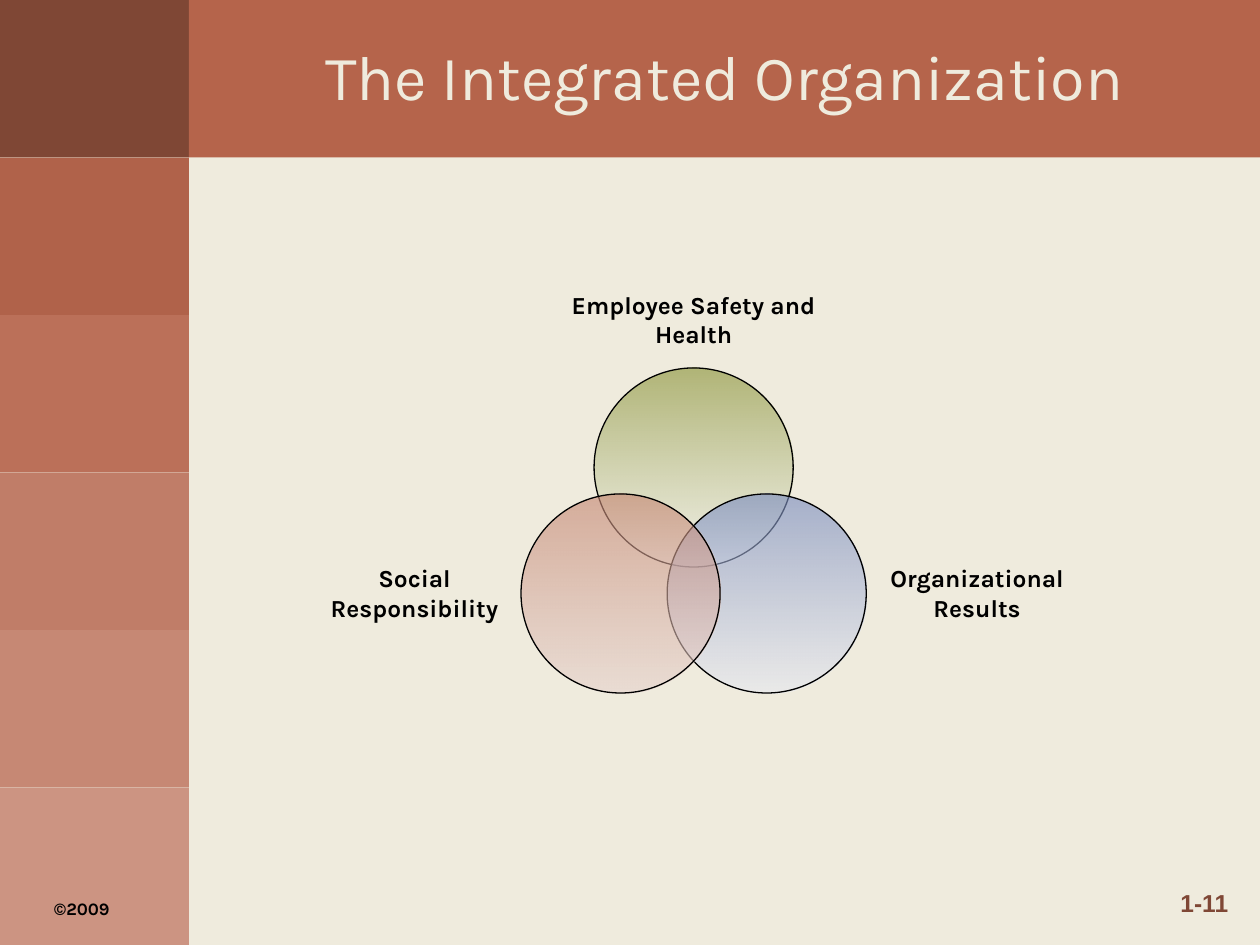
from dataclasses import dataclass

from lxml.etree import SubElement
from pptx import Presentation
from pptx.dml.color import RGBColor
from pptx.enum.shapes import MSO_SHAPE as Shape
from pptx.enum.text import MSO_ANCHOR as Anchor, MSO_AUTO_SIZE as AutoSize, PP_ALIGN as Align
from pptx.oxml.ns import qn
from pptx.util import Inches, Pt


@dataclass(frozen=True)
class Theme:
    background: str = "EFEBDD"
    corner: str = "7F4735"
    banner: str = "B5644B"
    sidebar: tuple = ("B0624A", "BB7059", "C07D68", "C68874", "CC9482")
    ink: str = "000000"
    # Each gradient holds (colour, opacity in percent) from top to bottom
    safety: tuple = (("8C953B", 63), ("F4F5F1", 60))
    results: tuple = (("7B8DBF", 63), ("E7E9F1", 60))
    social: tuple = (("C68874", 63), ("E6D2CD", 59))
    font: str = "Karla"
    number_font: str = "Arial"
    title_size: int = 36
    label_size: int = 14
    small_size: int = 10


THEME = Theme()


def rgb(colour):
    return RGBColor.from_string(colour)


def place(shape, left, top, width, height):
    shape.left, shape.top = Inches(left), Inches(top)
    shape.width, shape.height = Inches(width), Inches(height)


def write_text(shape, text, size=THEME.label_size, font=THEME.font, colour=THEME.ink,
               bold=True, align=Align.LEFT, wrap=True):
    frame = shape.text_frame
    frame.text = text
    frame.word_wrap = wrap
    frame.auto_size = AutoSize.NONE
    frame.vertical_anchor = Anchor.TOP
    paragraph = frame.paragraphs[0]
    paragraph.alignment = align
    paragraph.font.name = font
    paragraph.font.size = Pt(size)
    paragraph.font.bold = bold
    paragraph.font.color.rgb = rgb(colour)


def add_text(slide, text, box, **text_format):
    shape = slide.shapes.add_textbox(*map(Inches, box))
    write_text(shape, text, **text_format)


def add_block(slide, box, colour):
    block = slide.shapes.add_shape(Shape.RECTANGLE, *map(Inches, box))
    block.shadow.inherit = False
    block.fill.solid()
    block.fill.fore_color.rgb = rgb(colour)
    block.line.fill.background()


def add_circle(slide, box, gradient):
    circle = slide.shapes.add_shape(Shape.OVAL, *map(Inches, box))
    circle.shadow.inherit = False
    circle.line.color.rgb = rgb(THEME.ink)
    circle.line.width = Pt(0.75)
    circle.fill.gradient()
    circle.fill.gradient_angle = 270
    for stop, (colour, _) in zip(circle.fill.gradient_stops, gradient):
        stop.color.rgb = rgb(colour)
    # Opacity of each gradient stop
    colours = circle.element.spPr.find(qn("a:gradFill")).iter(qn("a:srgbClr"))
    for element, (_, opacity) in zip(colours, gradient):
        SubElement(element, qn("a:alpha")).set("val", str(opacity * 1000))


def build_sidebar(slide, left, top, width, height):
    colours = (THEME.corner, *THEME.sidebar)
    step = height / len(colours)
    for row, colour in enumerate(colours):
        add_block(slide, (left, top + row * step, width, step), colour)
    add_text(slide, "©2009", (left + 0.33, top + height - 0.42, 0.75, 0.33),
             size=THEME.small_size)


def build_header(slide, left, top, width, height):
    add_block(slide, (left, top, width, height), THEME.banner)
    title = slide.shapes.title
    place(title, left, top + 0.25, width, 0.7)
    write_text(title, "The Integrated Organization", size=THEME.title_size,
               colour=THEME.background, bold=False, align=Align.CENTER)
    # Bring the title in front of the banner
    title.element.getparent().append(title.element)


def build_venn(slide, left, top, width, height):
    diameter = 1.58
    centre = left + width / 2 - 0.04
    upper, lower = top + 0.67, top + height - diameter
    # Circles, from back to front: horizontal offset from the centre, top, gradient
    circles = ((0, upper, THEME.safety), (0.58, lower, THEME.results),
               (-0.58, lower, THEME.social))
    for offset, circle_top, gradient in circles:
        box = (centre + offset - diameter / 2, circle_top, diameter, diameter)
        add_circle(slide, box, gradient)
    # Labels: horizontal offset from the left, top, width
    labels = (("Employee Safety and Health", 1.92, top, 2.17),
              ("Organizational Results", 4.42, lower + 0.5, 1.67),
              ("Social Responsibility", 0, lower + 0.5, 1.58))
    for text, offset, label_top, label_width in labels:
        add_text(slide, text, (left + offset, label_top, label_width, 0.57),
                 align=Align.CENTER)


def build_page_number(slide, left, top, width, height):
    add_text(slide, "1-11", (left, top, width, height), font=THEME.number_font,
             colour=THEME.corner, wrap=False)


def main():
    presentation = Presentation()
    presentation.slide_width, presentation.slide_height = Inches(10), Inches(7.5)
    slide = presentation.slides.add_slide(presentation.slide_layouts[5])
    slide.background.fill.solid()
    slide.background.fill.fore_color.rgb = rgb(THEME.background)

    build_sidebar(slide, 0, 0, 1.5, 7.5)
    build_header(slide, 1.5, 0, 8.5, 1.25)
    build_venn(slide, 2.5, 2.25, 6.09, 3.25)
    build_page_number(slide, 9.27, 7, 0.59, 0.33)
    presentation.save("out.pptx")


if __name__ == "__main__":
    main()
